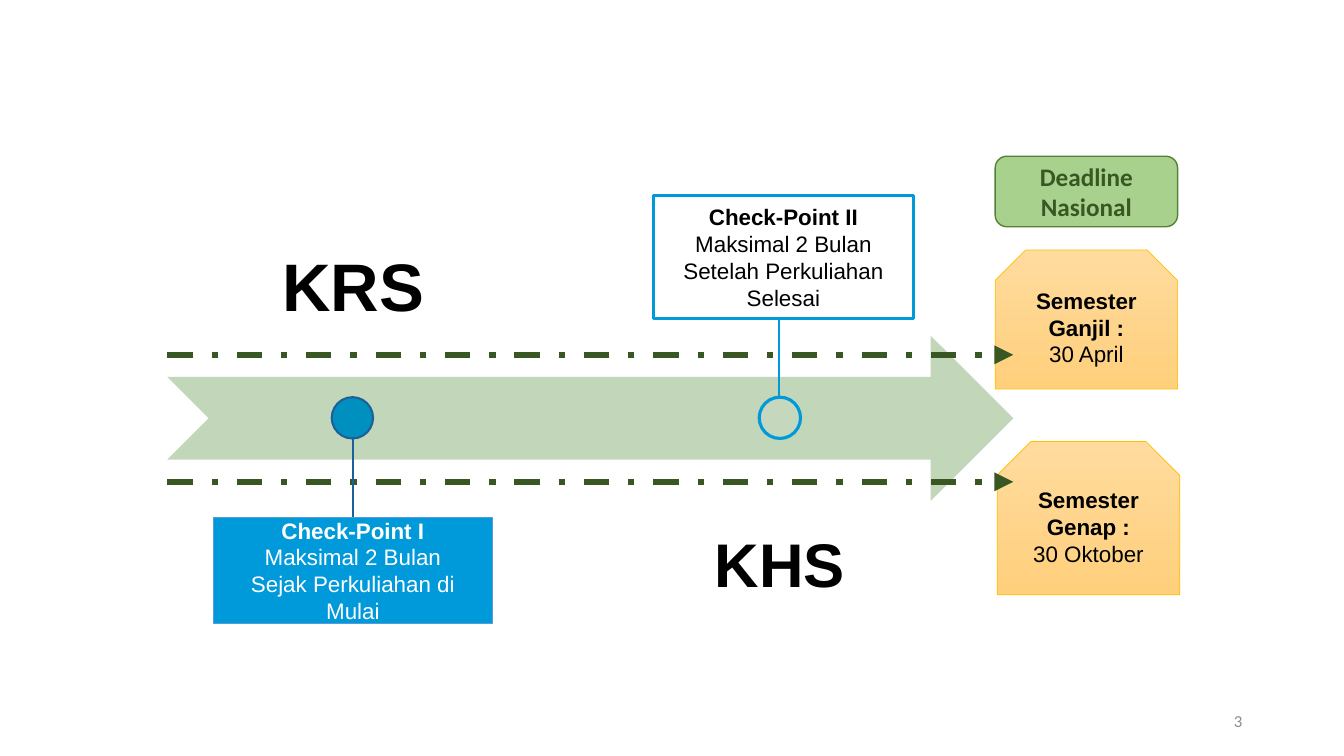
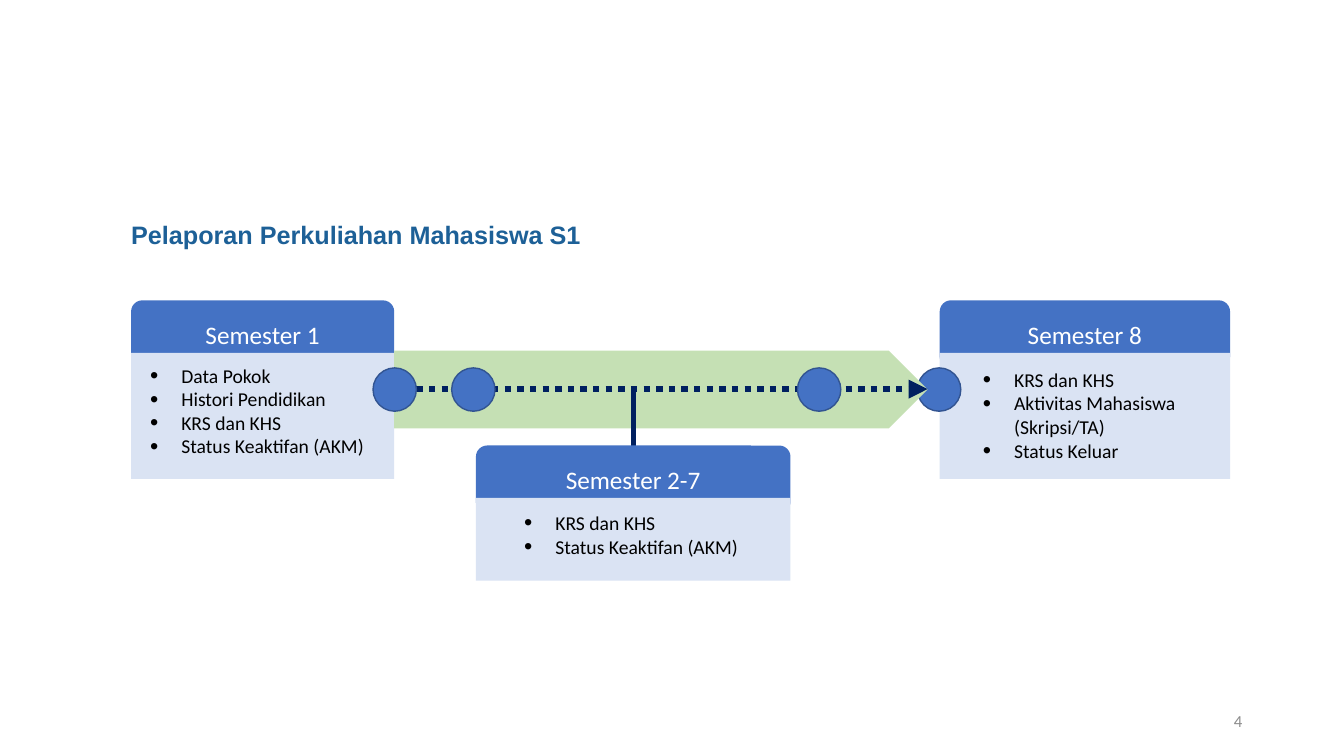
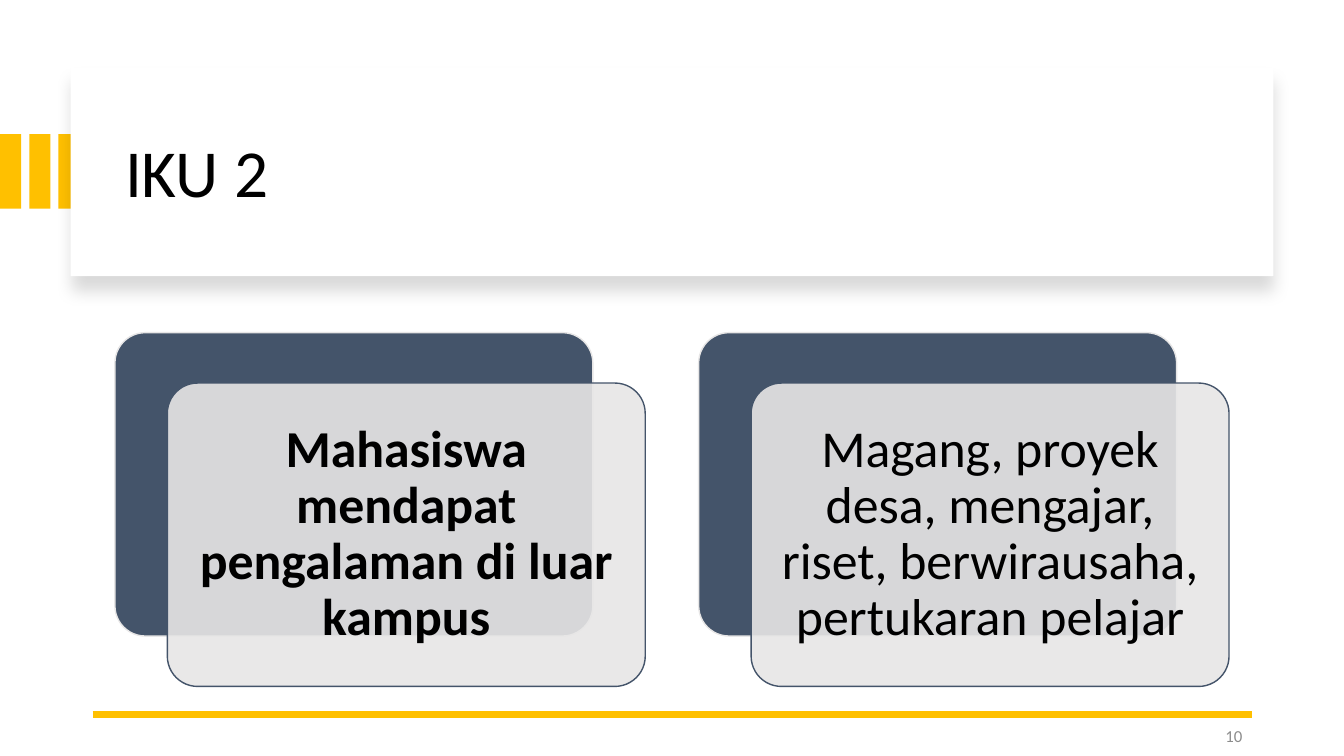
from lxml.etree import SubElement
from pptx import Presentation
from pptx.dml.color import RGBColor
from pptx.enum.dml import MSO_LINE
from pptx.enum.shapes import MSO_CONNECTOR, MSO_SHAPE
from pptx.enum.text import MSO_ANCHOR, MSO_AUTO_SIZE, PP_ALIGN
from pptx.oxml.ns import qn
from pptx.util import Pt

PX = 9144  # EMU per px, 100 px to the inch

BLACK = RGBColor(0x00, 0x00, 0x00)
WHITE = RGBColor(0xFF, 0xFF, 0xFF)
GREY = RGBColor(0x8C, 0x8C, 0x8C)
SILVER = RGBColor(0xE7, 0xE6, 0xE6)
SLATE = RGBColor(0x44, 0x54, 0x6A)
GOLD = RGBColor(0xFF, 0xC0, 0x00)
PEACH = RGBColor(0xFF, 0xDB, 0x9E)
AMBER = RGBColor(0xFF, 0xD0, 0x7C)
SKY = RGBColor(0x00, 0x99, 0xDA)
TEAL = RGBColor(0x00, 0x90, 0xBF)
STEEL = RGBColor(0x1D, 0x60, 0x97)
AZURE = RGBColor(0x5B, 0x9B, 0xD5)
BLUE = RGBColor(0x44, 0x72, 0xC4)
DENIM = RGBColor(0x32, 0x54, 0x91)
ICE = RGBColor(0xDA, 0xE3, 0xF3)
NAVY = RGBColor(0x00, 0x20, 0x60)
SAGE = RGBColor(0xC2, 0xD7, 0xB9)
MOSS = RGBColor(0xC5, 0xD8, 0xBD)
MINT = RGBColor(0xC5, 0xE0, 0xB4)
LEAF = RGBColor(0xA9, 0xD1, 0x8E)
GREEN = RGBColor(0x54, 0x82, 0x35)
PINE = RGBColor(0x38, 0x57, 0x23)

SANS, BODY = "Arial", "Calibri"
LEFT, MID, RIGHT = PP_ALIGN.LEFT, PP_ALIGN.CENTER, PP_ALIGN.RIGHT
TOP, CORE, BASE = MSO_ANCHOR.TOP, MSO_ANCHOR.MIDDLE, MSO_ANCHOR.BOTTOM


class Deck:
    def __init__(self):
        self.prs = Presentation()
        self.prs.slide_width, self.prs.slide_height = 1333 * PX, 750 * PX

    def page(self, num, top=695, title=False):
        """Start a slide and set its page number."""
        layout = self.prs.slide_layouts[5 if title else 6]
        self.slide = self.prs.slides.add_slide(layout)
        self.text((942, top, 300, 40), [num], 12, GREY, align=RIGHT, anchor=CORE)

    def title(self, at, text, size, color, font=BODY, bold=0, space=1):
        head = self.slide.shapes.title
        head.left, head.top, head.width, head.height = [n * PX for n in at]
        self.label(head, [text], size, color, font, bold, LEFT, CORE, space=space)

    def label(self, shape, lines, size, color, font=BODY, bold=0,
              align=MID, anchor=CORE, inset=None, space=None):
        """Fill a shape with text; the first `bold` paragraphs are bold."""
        frame = shape.text_frame
        frame.text = "\n".join(lines)
        frame.word_wrap = True
        frame.auto_size = MSO_AUTO_SIZE.NONE
        frame.vertical_anchor = anchor
        if inset:
            frame.margin_left = frame.margin_right = inset * PX
            frame.margin_top = frame.margin_bottom = inset * PX
        for i, par in enumerate(frame.paragraphs):
            par.alignment = align
            if space:
                par.line_spacing = space
            for run in par.runs:
                run.font.size, run.font.name = Pt(size), font
                run.font.bold = i < bold
                run.font.color.rgb = color

    def text(self, at, lines, size, color=BLACK, **style):
        box = self.slide.shapes.add_textbox(*[n * PX for n in at])
        self.label(box, lines, size, color, **style)
        return box

    def points(self, at, items):
        """Bulleted text box."""
        box = self.text(at, items, 14, align=LEFT, anchor=TOP)
        for par in box.text_frame.paragraphs:
            props = par._p.get_or_add_pPr()
            props.set("marL", str(31 * PX))
            props.set("indent", str(-31 * PX))
            SubElement(props, qn("a:buSzPct"), val="120000")
            SubElement(props, qn("a:buFont"), typeface="Arial")
            SubElement(props, qn("a:buChar"), char="•")

    def shape(self, kind, at, fill=None, line=None, width=1, adj=()):
        item = self.slide.shapes.add_shape(kind, *[n * PX for n in at])
        item.shadow.inherit = False
        for i, val in enumerate(adj):
            item.adjustments[i] = val
        if fill is None:
            item.fill.background()
        else:
            item.fill.solid()
            item.fill.fore_color.rgb = fill
        if line is None:
            item.line.fill.background()
        else:
            item.line.color.rgb = line
            item.line.width = Pt(width)
        return item

    def line(self, x1, y1, x2, y2, color, width, dash=None, arrow=False):
        link = self.slide.shapes.add_connector(
            MSO_CONNECTOR.STRAIGHT, *[n * PX for n in (x1, y1, x2, y2)])
        link.line.color.rgb = color
        link.line.width = Pt(width)
        if dash:
            link.line.dash_style = dash
        props = link.element.spPr
        if arrow:
            SubElement(props.find(qn("a:ln")), qn("a:tailEnd"), type="triangle")
        SubElement(props, qn("a:effectLst"))

    def due(self, at, name, date):
        """Deadline box with snipped corners and a gradient."""
        box = self.shape(MSO_SHAPE.SNIP_2_SAME_RECTANGLE, at, PEACH, GOLD, 0.5,
                         (0.22, 0))
        box.fill.gradient()
        box.fill.gradient_angle = 270
        for stop, color in zip(box.fill.gradient_stops, (PEACH, AMBER)):
            stop.color.rgb = color
        self.label(box, [name, date], 16, BLACK, SANS, 1)

    def dot(self, x, y, size, fill, line, width=1):
        self.shape(MSO_SHAPE.OVAL, (x, y, size, size), fill, line, width)

    def card(self, x, y, w, h, name, at, items):
        """Semester heading above a panel of height h with a list."""
        head = self.shape(MSO_SHAPE.ROUNDED_RECTANGLE, (x, y, w, 67), BLUE)
        self.label(head, [name], 18, WHITE)
        self.shape(MSO_SHAPE.RECTANGLE, (x, y + 52, w, h), ICE)
        self.points(at, items)

    def stack(self, x, text, bold):
        """Two offset rounded cards, the front one see-through."""
        kind = MSO_SHAPE.ROUNDED_RECTANGLE
        self.shape(kind, (x, 330, 474, 301), SLATE, SILVER, adj=(0.1,))
        front = self.shape(kind, (x + 52, 380, 474, 301), SILVER, SLATE, adj=(0.1,))
        tone = front.element.spPr.find(qn("a:solidFill"))[0]
        SubElement(tone, qn("a:alpha"), val="90000")
        self.label(front, [text], 37, BLACK, bold=bold, inset=15, space=0.9)

    def shade(self, item):
        """Give a shape a soft shadow below it."""
        effect = item.element.spPr.find(qn("a:effectLst"))
        outer = SubElement(effect, qn("a:outerShdw"), blurRad=str(Pt(11)),
                           dist=str(Pt(10)), dir="5400000", algn="t", rotWithShape="0")
        tone = SubElement(outer, qn("a:srgbClr"), val="000000")
        SubElement(tone, qn("a:alpha"), val="15000")


def term(deck):
    """Timeline of one semester."""
    deck.page("3")
    deck.due((989, 438, 181, 152), "Semester Genap :", "30 Oktober")
    deck.due((987, 248, 181, 138), "Semester Ganjil :", "30 April")
    deck.shape(MSO_SHAPE.NOTCHED_RIGHT_ARROW, (166, 333, 839, 164), SAGE)
    deck.text((235, 216, 231, 144), ["KRS"], 48, font=SANS, bold=1,
              anchor=BASE, inset=37, space=0.9)
    deck.text((663, 496, 221, 114), ["KHS"], 44, font=SANS, bold=1,
              anchor=TOP, inset=34, space=0.9)
    deck.dot(329, 394, 41, TEAL, STEEL, 1.5)
    deck.dot(753, 394, 41, MOSS, SKY, 2.25)
    first = deck.shape(MSO_SHAPE.RECTANGLE, (212, 513, 276, 106), SKY, AZURE, 0.5)
    deck.label(first, ["Check-Point I", "Maksimal 2 Bulan", "Sejak Perkuliahan di Mulai"],
               16, WHITE, SANS, 1)
    second = deck.shape(MSO_SHAPE.RECTANGLE, (648, 194, 258, 122), None, SKY, 2.25)
    deck.label(second, ["Check-Point II", "Maksimal 2 Bulan Setelah Perkuliahan Selesai"],
               16, BLACK, SANS, 1)
    for y in (352, 478):
        deck.line(166, y, 1005, y, PINE, 4.5, MSO_LINE.DASH_DOT, True)
    deck.line(350, 434, 350, 513, STEEL, 1.5)
    deck.line(773, 316, 773, 395, SKY, 1.5)
    limit = deck.shape(MSO_SHAPE.ROUNDED_RECTANGLE, (987, 155, 181, 70), LEAF, GREEN)
    deck.label(limit, ["Deadline Nasional"], 18, PINE, bold=1)


def study(deck):
    """Reports over eight semesters."""
    deck.page("4", title=True)
    deck.title((120, 205, 514, 55), "Pelaporan Perkuliahan Mahasiswa S1", 18, STEEL,
               SANS, 1)
    deck.card(932, 298, 288, 125, "Semester 8", (965, 360, 261, 104),
              ["KRS dan KHS", "Aktivitas Mahasiswa (Skripsi/TA)", "Status Keluar"])
    deck.card(130, 298, 261, 125, "Semester 1", (139, 356, 233, 104),
              ["Data Pokok", "Histori Pendidikan", "KRS dan KHS",
               "Status Keaktifan (AKM)"])
    deck.dot(910, 365, 43, BLUE, DENIM)
    deck.shape(MSO_SHAPE.PENTAGON, (391, 348, 529, 77), MINT)
    deck.line(413, 386, 920, 386, NAVY, 4.5, MSO_LINE.ROUND_DOT, True)
    for x in (370, 448, 791):
        deck.dot(x, 365, 43, BLUE, DENIM)
    deck.line(628, 389, 628, 442, NAVY, 3.75)
    deck.card(472, 442, 312, 82, "Semester 2-7", (510, 502, 236, 57),
              ["KRS dan KHS", "Status Keaktifan (AKM)"])


def goal(deck):
    """Second performance goal."""
    deck.page("10", top=710, title=True)
    for i in range(3):
        deck.shape(MSO_SHAPE.RECTANGLE, (i * 29, 133, 21, 74), GOLD)
    panel = deck.shape(MSO_SHAPE.RECTANGLE, (70, 67, 1193, 207), WHITE)
    deck.shade(panel)
    deck.title((114, 89, 1113, 170), "IKU 2", 48, BLACK, space=0.9)
    head = deck.slide.shapes.title.element
    panel.element.addnext(head)  # title in front of the panel
    deck.line(92, 709, 1242, 709, GOLD, 4.5)
    deck.stack(114, "Mahasiswa mendapat pengalaman di luar kampus", 1)
    deck.stack(693, "Magang, proyek desa, mengajar, riset, berwirausaha, "
               "pertukaran pelajar", 0)


def main():
    deck = Deck()
    for build in (term, study, goal):
        build(deck)
    deck.prs.save("out.pptx")


if __name__ == "__main__":
    main()
